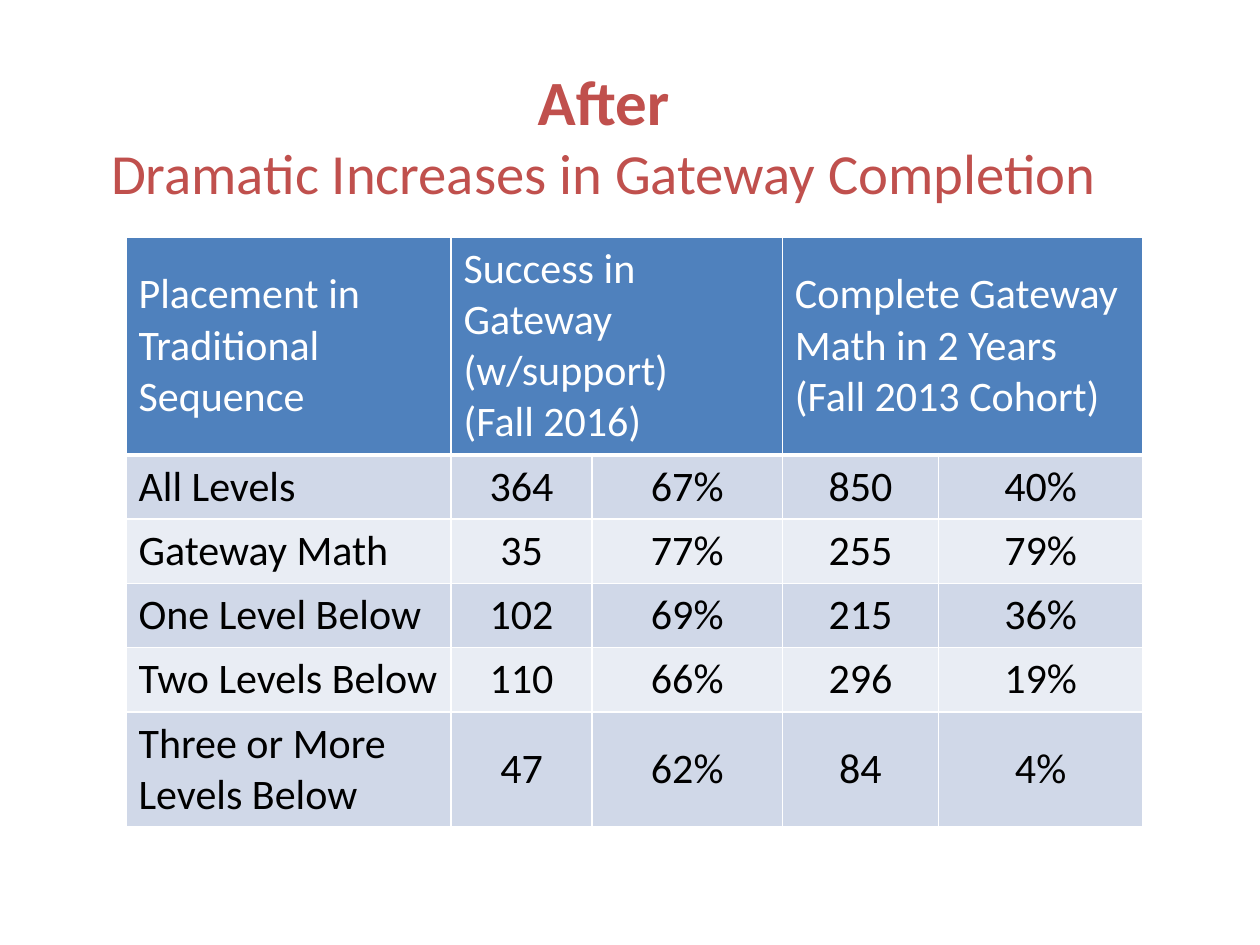
"""Build the gateway completion slide."""
from typing import NamedTuple

from lxml.etree import SubElement
from pptx import Presentation
from pptx.dml.color import RGBColor
from pptx.enum.text import MSO_ANCHOR as Anchor, MSO_AUTO_SIZE as AutoSize, PP_ALIGN as Align
from pptx.oxml.ns import qn
from pptx.util import Inches, Pt

FONT = "Calibri"
WHITE, BLACK, RED, BLUE = "FFFFFF", "000000", "C0504D", "4F81BD"
BANDS = ("D0D8E8", "E9EDF4")
COL_WIDTHS = (2.58, 1.12, 1.51, 1.24, 1.62)
ROW_HEIGHTS = (1.73, 0.51, 0.51, 0.51, 0.51, 0.9)


class Header(NamedTuple):
    col: int
    span: int
    lines: tuple[str, ...]


class Level(NamedTuple):
    name: str
    gateway_count: str
    gateway_rate: str
    cohort_count: str
    cohort_rate: str


HEADERS = (
    Header(0, 1, ("Placement in Traditional Sequence",)),
    Header(1, 2, ("Success in Gateway (w/support)", "(Fall 2016)")),
    Header(3, 2, ("Complete Gateway Math in 2 Years", "(Fall 2013 Cohort)")),
)
LEVELS = (
    Level("All Levels", "364", "67%", "850", "40%"),
    Level("Gateway Math", "35", "77%", "255", "79%"),
    Level("One Level Below", "102", "69%", "215", "36%"),
    Level("Two Levels Below", "110", "66%", "296", "19%"),
    Level("Three or More Levels Below", "47", "62%", "84", "4%"),
)


def rgb(color: str) -> RGBColor:
    return RGBColor.from_string(color)


def add_run(p, text: str, size: float, color: str, bold: bool = False) -> None:
    r = p.add_run()
    r.text = text
    r.font.name, r.font.size, r.font.bold = FONT, Pt(size), bold
    r.font.color.rgb = rgb(color)


def set_borders(cell, bottom: float) -> None:
    tc_pr = cell._tc.get_or_add_tcPr()
    for i, (side, width) in enumerate((("L", 1), ("R", 1), ("T", 1), ("B", bottom))):
        ln = SubElement(tc_pr, qn(f"a:ln{side}"), w=str(Pt(width)))
        SubElement(SubElement(ln, qn("a:solidFill")), qn("a:srgbClr"), val=WHITE)
        tc_pr.insert(i, ln)


def fill_cell(cell, lines: tuple[str, ...], fill: str, color: str,
              align: Align = Align.LEFT) -> None:
    cell.vertical_anchor = Anchor.MIDDLE
    tf = cell.text_frame
    for i, line in enumerate(lines):
        p = tf.add_paragraph() if i else tf.paragraphs[0]
        p.alignment = align
        add_run(p, line, 24, color)
    cell.fill.solid()
    cell.fill.fore_color.rgb = rgb(fill)


def add_title(slide) -> None:
    title = slide.shapes.title
    title.left, title.top = Inches(0.5), Inches(0.3)
    title.width, title.height = Inches(8.58), Inches(1.53)
    tf = title.text_frame
    tf.auto_size, tf.vertical_anchor = AutoSize.NONE, Anchor.MIDDLE
    p = tf.paragraphs[0]
    p.alignment = Align.CENTER
    add_run(p, "After", 36, RED, bold=True)
    p.add_line_break()
    add_run(p, "Dramatic Increases in Gateway Completion", 32.4, RED)


def add_completion_table(slide) -> None:
    table = slide.shapes.add_table(
        len(ROW_HEIGHTS), len(COL_WIDTHS), Inches(1), Inches(1.88),
        Inches(sum(COL_WIDTHS)), Inches(sum(ROW_HEIGHTS))).table
    for column, width in zip(table.columns, COL_WIDTHS):
        column.width = Inches(width)
    for row, height in zip(table.rows, ROW_HEIGHTS):
        row.height = Inches(height)
    for header in HEADERS:
        cell = table.cell(0, header.col)
        if header.span > 1:
            cell.merge(table.cell(0, header.col + header.span - 1))
        fill_cell(cell, header.lines, BLUE, WHITE)
    for i, level in enumerate(LEVELS):
        for col, text in enumerate(level):
            align = Align.CENTER if col else Align.LEFT
            fill_cell(table.cell(i + 1, col), (text,), BANDS[i % 2], BLACK, align)
    for i, row in enumerate(table.rows):
        for cell in row.cells:
            set_borders(cell, 1 if i else 3)


def main() -> None:
    prs = Presentation()
    prs.slide_width, prs.slide_height = Inches(10), Inches(7.5)
    slide = prs.slides.add_slide(prs.slide_layouts.get_by_name("Title Only"))
    add_title(slide)
    add_completion_table(slide)
    prs.save("out.pptx")


if __name__ == "__main__":
    main()
